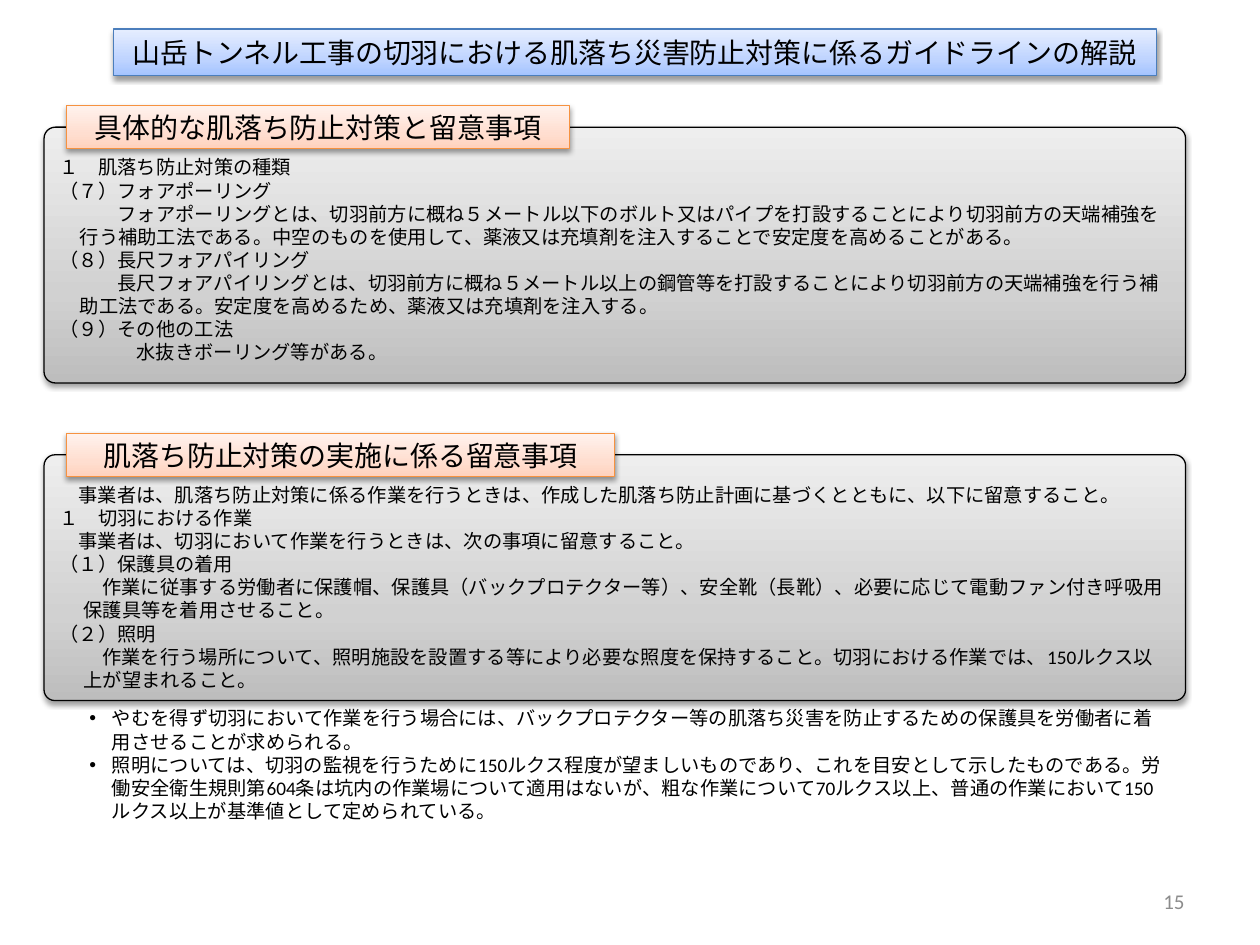
from lxml import etree
from pptx import Presentation
from pptx.dml.color import RGBColor
from pptx.enum.lang import MSO_LANGUAGE_ID
from pptx.enum.shapes import MSO_SHAPE
from pptx.enum.text import MSO_ANCHOR, MSO_AUTO_SIZE, PP_ALIGN
from pptx.oxml import parse_xml
from pptx.oxml.ns import qn
from pptx.util import Pt

PX = 9144  # 100 px to the inch
EM = 15  # one full-width letter of body text
RECT, ROUND = MSO_SHAPE.RECTANGLE, MSO_SHAPE.ROUNDED_RECTANGLE
LEFT, CENTER, RIGHT = PP_ALIGN.LEFT, PP_ALIGN.CENTER, PP_ALIGN.RIGHT
TOP, MIDDLE = MSO_ANCHOR.TOP, MSO_ANCHOR.MIDDLE
GROW = MSO_AUTO_SIZE.SHAPE_TO_FIT_TEXT
JA = MSO_LANGUAGE_ID.JAPANESE
NS = "http://schemas.openxmlformats.org/drawingml/2006/main"
INK = {"text": "000000", "number": "8C8C8C",
       "gray": "000000", "blue": "4B7EBC", "orange": "F69240"}
FADE = {"gray": {0: "BDBDBD", 35: "D1D1D1", 100: "EEEEEE"},
        "blue": {0: "A4C4FF", 35: "BFD4FF", 100: "E6EEFF"},
        "orange": {0: "FFD2BD", 35: "FFDED0", 100: "FFF2ED"}}

# Each paragraph: text, left margin, first-line indent
KINDS = [
    ("１　肌落ち防止対策の種類", 0, 0),
    ("（７）フォアポーリング", 0, 0),
    ("フォアポーリングとは、切羽前方に概ね５メートル以下のボルト又はパイプを打設することにより"
     "切羽前方の天端補強を行う補助工法である。中空のものを使用して、薬液又は充填剤を注入する"
     "ことで安定度を高めることがある。", 16, 2 * EM),
    ("（８）長尺フォアパイリング", 0, 0),
    ("長尺フォアパイリングとは、切羽前方に概ね５メートル以上の鋼管等を打設することにより"
     "切羽前方の天端補強を行う補助工法である。安定度を高めるため、薬液又は充填剤を注入する。",
     16, 2 * EM),
    ("（９）その他の工法", 0, 0),
    ("水抜きボーリング等がある。", 16, 3 * EM),
]
CARE = [
    ("事業者は、肌落ち防止対策に係る作業を行うときは、作成した肌落ち防止計画に基づくとともに、"
     "以下に留意すること。", 0, EM),
    ("１　切羽における作業", 0, 0),
    ("事業者は、切羽において作業を行うときは、次の事項に留意すること。", 0, EM),
    ("（１）保護具の着用", 0, 0),
    ("作業に従事する労働者に保護帽、保護具（バックプロテクター等）、安全靴（長靴）、"
     "必要に応じて電動ファン付き呼吸用保護具等を着用させること。", 19, EM),
    ("（２）照明", 0, 0),
    ("作業を行う場所について、照明施設を設置する等により必要な照度を保持すること。"
     "切羽における作業では、150ルクス以上が望まれること。", 19, EM),
]
NOTES = [
    ("やむを得ず切羽において作業を行う場合には、バックプロテクター等の肌落ち災害を防止するための"
     "保護具を労働者に着用させることが求められる。", 20, -18),
    ("照明については、切羽の監視を行うために150ルクス程度が望ましいものであり、これを目安として"
     "示したものである。労働安全衛生規則第604条は坑内の作業場について適用はないが、粗な作業について"
     "70ルクス以上、普通の作業において150ルクス以上が基準値として定められている。", 20, -18),
]


def write(shape, paras, size=11, color="text", align=LEFT, anchor=TOP,
          top=5, bullet=None, fit=None):
    frame = shape.text_frame
    frame.word_wrap = True
    frame.vertical_anchor = anchor
    frame.margin_left = frame.margin_right = 10 * PX
    frame.margin_top, frame.margin_bottom = top * PX, 5 * PX
    if fit is not None:
        frame.auto_size = fit
    for i, (text, left, first) in enumerate(paras):
        para = frame.add_paragraph() if i else frame.paragraphs[0]
        para.alignment = align
        props = para._p.get_or_add_pPr()
        props.set("marL", str(left * PX))
        props.set("indent", str(first * PX))
        if bullet:
            etree.SubElement(props, qn("a:buFont")).set("typeface", "Arial")
            etree.SubElement(props, qn("a:buChar")).set("char", bullet)
        run = para.add_run()
        run.text = text
        run.font.name, run.font.size = "Calibri", Pt(size)
        run.font.language_id = JA
        run.font.color.rgb = RGBColor.from_string(INK[color])


def card(slide, kind, box, hue):
    """Add a shape with an upward fade, a thin line and a soft shadow."""
    shape = slide.shapes.add_shape(kind, *(n * PX for n in box))
    stops = "".join(f'<a:gs pos="{pos * 1000}"><a:srgbClr val="{tone}"/></a:gs>'
                    for pos, tone in FADE[hue].items())
    shape._element.spPr.append(parse_xml(
        f'<a:gradFill xmlns:a="{NS}" rotWithShape="1"><a:gsLst>{stops}</a:gsLst>'
        '<a:lin ang="16200000" scaled="0"/></a:gradFill>'))
    shape.line.color.rgb = RGBColor.from_string(INK[hue])
    shape.line.width = Pt(0.75)
    shape.shadow.inherit = False
    shape._element.spPr.find(qn("a:effectLst")).append(parse_xml(
        f'<a:outerShdw xmlns:a="{NS}" blurRad="40000" dist="20000" dir="5400000" '
        'rotWithShape="0"><a:srgbClr val="000000"><a:alpha val="38000"/>'
        '</a:srgbClr></a:outerShdw>'))
    return shape


def title(slide, box, text):
    write(card(slide, RECT, box, "blue"), [(text, 0, 0)], size=16,
          align=CENTER, fit=GROW)


def panel(slide, box, head, width, paras):
    """Add a rounded panel with a heading tab of the given width on its top edge."""
    x, y, w, h = box
    body = card(slide, ROUND, box, "gray")
    body.adjustments[0] = 0.044
    write(body, paras, top=20)
    tab = card(slide, RECT, (x + 18, y - 17, width, 34), "orange")
    write(tab, [(head, 0, 0)], size=16, align=CENTER, anchor=MIDDLE)


def label(slide, box, paras, **style):
    write(slide.shapes.add_textbox(*(n * PX for n in box)), paras, **style)


def main():
    deck = Presentation()
    deck.slide_width, deck.slide_height = 1000 * PX, 750 * PX
    slide = deck.slides.add_slide(deck.slide_layouts[6])
    title(slide, (90, 23, 828, 37),
          "山岳トンネル工事の切羽における肌落ち災害防止対策に係るガイドラインの解説")
    panel(slide, (35, 101, 906, 203), "具体的な肌落ち防止対策と留意事項", 399, KINDS)
    panel(slide, (35, 361, 906, 195), "肌落ち防止対策の実施に係る留意事項", 435, CARE)
    label(slide, (59, 556, 875, 103), NOTES, bullet="•", fit=GROW)
    label(slide, (717, 695, 233, 40), [("15", 0, 0)], size=12, color="number",
          align=RIGHT, anchor=MIDDLE)
    deck.save("out.pptx")


if __name__ == "__main__":
    main()
